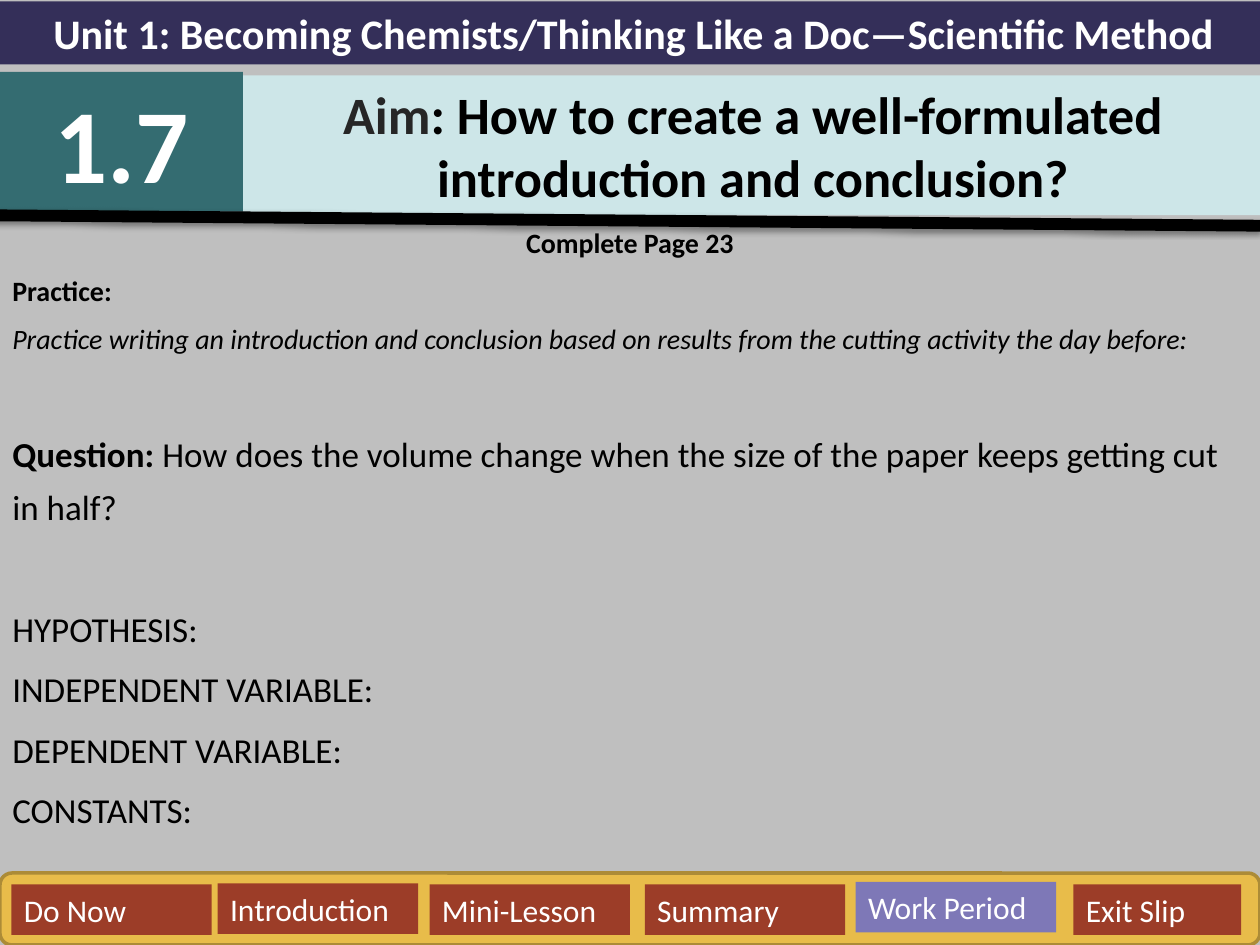
import pptx
import pptx.util
import pptx.dml.color
import pptx.enum.shapes
import pptx.enum.text
from lxml import etree
from pptx.util import Cm, Pt

SHAPE = pptx.enum.shapes.MSO_SHAPE
ALIGN = pptx.enum.text.PP_ALIGN
A = "http://schemas.openxmlformats.org/drawingml/2006/main"

BLACK, WHITE, RED, VIOLET = "000000", "FFFFFF", "9C3D28", "7E78B7"


def rgb(value):
    return pptx.dml.color.RGBColor.from_string(value)


def add_run(p, text, size=20, color=BLACK, bold=False, italic=False):
    r = p.add_run()
    r.text = text
    r.font.name = "Calibri"
    r.font.size = Pt(size)
    r.font.color.rgb = rgb(color)
    r.font.bold = bold
    r.font.italic = italic


def add_block(s, x, y, w, h, fill, line=None, kind=SHAPE.RECTANGLE):
    sp = s.shapes.add_shape(kind, Cm(x), Cm(y), Cm(w), Cm(h))
    sp.shadow.inherit = False
    sp.fill.solid()
    sp.fill.fore_color.rgb = rgb(fill)
    if line:
        sp.line.color.rgb = rgb(line)
        sp.line.width = Pt(2)
    else:
        sp.line.fill.background()
    return sp


def add_label(s, x, y, w, h, fill, runs, align=ALIGN.CENTER):
    tf = add_block(s, x, y, w, h, fill).text_frame
    tf.word_wrap = True
    tf.vertical_anchor = pptx.enum.text.MSO_ANCHOR.TOP
    p = tf.paragraphs[0]
    p.alignment = align
    for text, fmt in runs:
        add_run(p, text, **fmt)


def add_body(s, paragraphs):
    tf = s.shapes.add_textbox(Cm(0), Cm(4.55), Cm(25.4), Cm(13.08)).text_frame
    tf.word_wrap = True
    for i, (before, runs) in enumerate(paragraphs):
        p = tf.add_paragraph() if i else tf.paragraphs[0]
        p.alignment = ALIGN.LEFT if i else ALIGN.CENTER
        p.line_spacing = 1.27 if i else 0.8
        p.space_before = Pt(before)
        for text, fmt in runs:
            add_run(p, text, **fmt)


def add_rule(s, x1, y1, x2, y2):
    c = s.shapes.add_connector(pptx.enum.shapes.MSO_CONNECTOR.STRAIGHT,
                               Cm(x1), Cm(y1), Cm(x2), Cm(y2))
    c.line.color.rgb = rgb(BLACK)
    c.line.width = Pt(6.75)
    # Soft shadow straight below the rule
    effects = etree.SubElement(c._element.spPr, f"{{{A}}}effectLst")
    shadow = etree.SubElement(effects, f"{{{A}}}outerShdw", blurRad=str(Pt(3.1)),
                              dist=str(Pt(1.6)), dir="5400000", rotWithShape="0")
    color = etree.SubElement(shadow, f"{{{A}}}srgbClr", val=BLACK)
    etree.SubElement(color, f"{{{A}}}alpha", val="38000")


def main():
    prs = pptx.Presentation()
    prs.slide_width, prs.slide_height = Cm(25.4), Cm(19.05)
    s = prs.slides.add_slide(prs.slide_layouts[6])
    s.background.fill.solid()
    s.background.fill.fore_color.rgb = rgb("BFBFBF")

    # Task text; wide gaps set the question and the headings apart
    small_bold = dict(size=16, bold=True)
    add_body(s, [
        (0, [("Complete Page 23", small_bold)]),
        (3.2, [("Practice:", small_bold)]),
        (3.2, [("Practice writing an introduction and conclusion based on results "
                "from the cutting activity the day before:",
                dict(size=16, italic=True))]),
        (37.5, [("Question:", dict(bold=True)),
                (" How does the volume change when the size of the paper keeps "
                 "getting cut in half?", {})]),
        (39.3, [("HYPOTHESIS:", {})]),
        (4, [("INDEPENDENT VARIABLE:", {})]),
        (4, [("DEPENDENT VARIABLE:", {})]),
        (4, [("CONSTANTS:", {})]),
    ])

    # Header: unit, lesson number, aim
    add_label(s, 0, 0.03, 25.55, 1.27, "342F59",
              [("Unit 1: Becoming Chemists/Thinking Like a Doc—Scientific Method",
                dict(size=24, color=WHITE, bold=True))])
    add_label(s, 0, 1.45, 4.9, 2.82, "346C71",
              [("1.7", dict(size=60, color=WHITE, bold=True))])
    add_label(s, 4.9, 1.52, 20.57, 2.82, "CDE6E8",
              [("Aim", dict(size=30, color="262626", bold=True)),
               (": How to create a well-formulated introduction and conclusion?",
                dict(size=30, bold=True))])
    add_rule(s, -0.13, 4.34, 25.4, 4.55)

    # Lesson stages, the current one in violet
    add_block(s, 0, 17.6, 25.4, 1.45, "E8BC4A", line="AC8B37",
              kind=SHAPE.ROUNDED_RECTANGLE)
    for text, x, y, w, fill in [
        ("Do Now", 0.23, 17.83, 4.04, RED),
        ("Introduction", 4.39, 17.81, 4.04, RED),
        ("Mini-Lesson", 8.66, 17.83, 4.04, RED),
        ("Summary", 13, 17.83, 4.04, RED),
        ("Work Period", 17.25, 17.78, 4.04, VIOLET),
        ("Exit Slip", 21.64, 17.83, 3.38, RED),
    ]:
        add_label(s, x, y, w, 1.02, fill,
                  [(text, dict(size=18, color=WHITE))], align=ALIGN.LEFT)

    prs.save("out.pptx")


if __name__ == "__main__":
    main()
